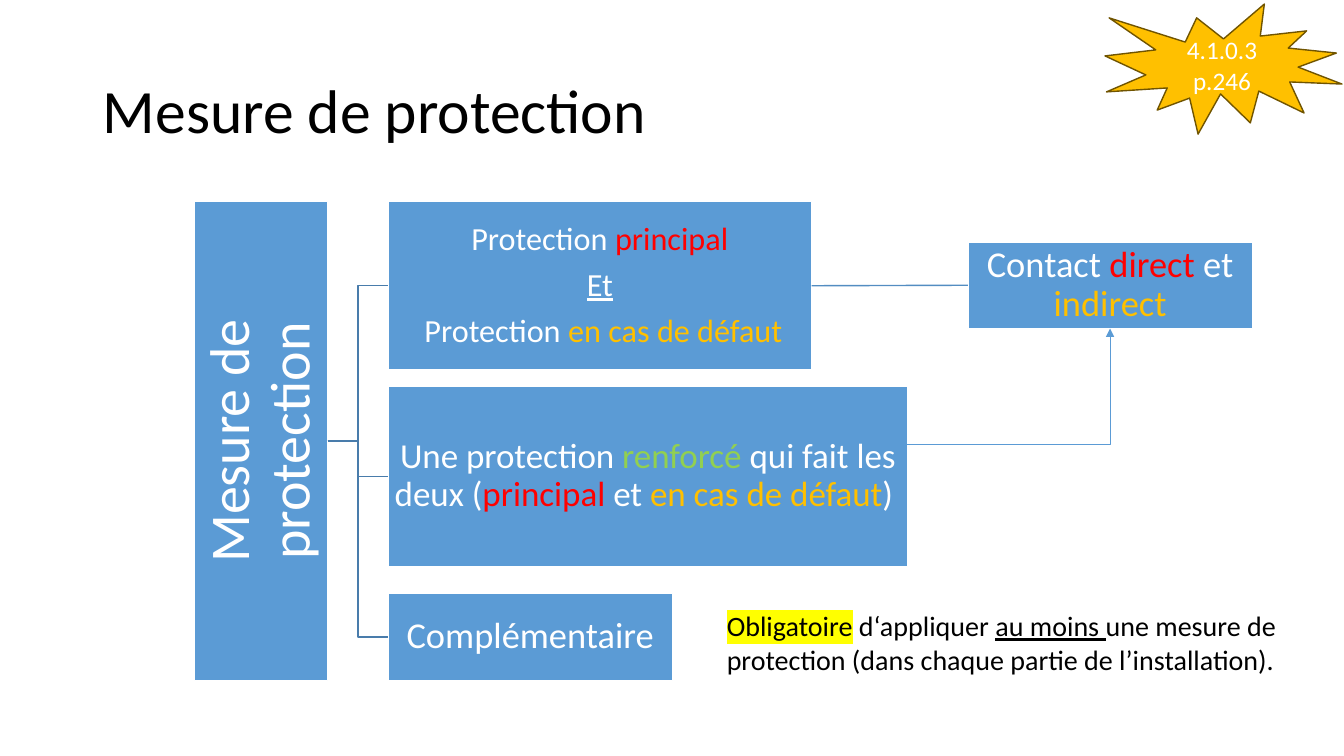
from dataclasses import dataclass

from lxml import etree
from pptx import Presentation
from pptx.dml.color import RGBColor
from pptx.enum import shapes, text
from pptx.oxml.ns import qn
from pptx.util import Inches, Pt


@dataclass(frozen=True)
class Theme:
    font: str = "Calibri"
    black: str = "000000"
    white: str = "FFFFFF"
    blue: str = "5B9BD5"
    branch: str = "497CAB"
    link: str = "538DC1"
    red: str = "FF0000"
    gold: str = "FFC000"
    gold_edge: str = "705400"
    green: str = "92D050"
    yellow: str = "FFFF00"
    title: int = 44
    root: int = 40
    box: int = 26
    strong: int = 25
    main: int = 23
    note: int = 20
    badge: int = 18


T = Theme()


def rgb(value):
    return RGBColor.from_string(value)


def write(tf, paragraphs, size, color, align=text.PP_ALIGN.CENTER,
          anchor=text.MSO_ANCHOR.MIDDLE, inset=None, **spacing):
    """Fill a frame; each run is (words, dict of color, underline, highlight)."""
    tf.word_wrap = True
    tf.vertical_anchor = anchor
    if inset is not None:
        for side in ("left", "top", "right", "bottom"):
            setattr(tf, f"margin_{side}", Inches(inset))
    for i, runs in enumerate(paragraphs):
        p = tf.add_paragraph() if i else tf.paragraphs[0]
        for name, value in {"alignment": align, **spacing}.items():
            setattr(p, name, value)
        for words, look in runs:
            r = p.add_run()
            r.text = words
            font = {"name": T.font, "size": Pt(size),
                    "underline": look.get("underline")}
            for name, value in font.items():
                setattr(r.font, name, value)
            r.font.color.rgb = rgb(look.get("color", color))
            if "highlight" in look:
                mark = etree.Element(qn("a:highlight"))
                etree.SubElement(mark, qn("a:srgbClr"), val=look["highlight"])
                r.font._element.find(qn("a:solidFill")).addnext(mark)


def add_figure(s, kind, box, fill, line):
    sp = s.shapes.add_shape(kind, *map(Inches, box))
    sp.shadow.inherit = False
    sp.fill.solid()
    sp.fill.fore_color.rgb = rgb(fill)
    sp.line.color.rgb = rgb(line)
    sp.line.width = Pt(1)
    return sp


def add_box(s, box, paragraphs, size, inset=0.02):
    sp = add_figure(s, shapes.MSO_SHAPE.RECTANGLE, box, T.blue, T.white)
    write(sp.text_frame, paragraphs, size, T.white, inset=inset,
          line_spacing=0.9, space_after=Pt(round(size * 0.35)))
    return sp


def add_link(s, kind, color, width, start=(0, 0), end=(0, 0)):
    link = s.shapes.add_connector(kind, *map(Inches, start + end))
    link.line.color.rgb = rgb(color)
    link.line.width = Pt(width)
    etree.SubElement(link._element.spPr, qn("a:effectLst"))
    return link


def add_title(s, box):
    sp = s.shapes.title
    sp.left, sp.top, sp.width, sp.height = map(Inches, box)
    write(sp.text_frame, [[("Mesure de protection", {})]], T.title, T.black,
          align=text.PP_ALIGN.LEFT, line_spacing=0.9)


def add_diagram(s, box):
    x, y, w, h = box
    red, gold = {"color": T.red}, {"color": T.gold}
    elbow = shapes.MSO_CONNECTOR.ELBOW
    column = x + 1.92

    # Root bar, read from bottom to top
    root = add_box(s, (x, y, 1.32, h), [[("Mesure de protection", {})]],
                   T.root, inset=0.03)
    root.text_frame._txBody.bodyPr.set("vert", "vert270")

    # Three measures and the kind of contact they cover
    main = add_box(s, (column, y, 4.2, 1.67), [
        [("Protection", {}), (" principal", red)],
        [("Et", {"underline": True})],
        [(" Protection ", {}), ("en cas de défaut", gold)],
    ], T.main)
    strong = add_box(s, (column, y + 1.83, 5.15, 1.79), [
        [("Une protection ", {}), ("renforcé", {"color": T.green}),
         (" qui fait les deux (", {}), ("principal", red), (" et ", {}),
         ("en cas de défaut", gold), (") ", {})],
    ], T.strong)
    extra = add_box(s, (column, y + h - 0.86, 2.82, 0.86),
                    [[("Complémentaire", {})]], T.box)
    contact = add_box(s, (x + w - 2.82, y + 0.4, 2.82, 0.86), [
        [("Contact ", {}), ("direct", red), (" et ", {}), ("indirect", gold)],
    ], T.box)

    # Branches from the root
    for measure in (main, strong, extra):
        branch = add_link(s, elbow, T.branch, 1)
        branch.begin_connect(root, 3)
        branch.end_connect(measure, 1)

    # Links to the contact box
    link = add_link(s, shapes.MSO_CONNECTOR.STRAIGHT, T.link, 1)
    link.begin_connect(main, 3)
    link.end_connect(contact, 1)
    arrow = add_link(s, elbow, T.blue, 0.5, (column + 5.15, y + 2.41),
                     (x + w - 1.41, y + 1.26))
    arrow._element.spPr.find(qn("a:prstGeom")).set("prst", "bentConnector2")
    etree.SubElement(arrow.line._get_or_add_ln(), qn("a:tailEnd"),
                     type="triangle")


def add_note(s, box):
    sp = s.shapes.add_textbox(*map(Inches, box))
    write(sp.text_frame, [[
        ("Obligatoire", {"highlight": T.yellow}),
        (" d‘appliquer ", {}),
        ("au moins ", {"underline": True}),
        ("une mesure de protection (dans chaque partie de l’installation).",
         {}),
    ]], T.note, T.black, align=text.PP_ALIGN.LEFT, anchor=text.MSO_ANCHOR.TOP)


def add_badge(s, box):
    sp = add_figure(s, shapes.MSO_SHAPE.EXPLOSION1, box, T.gold, T.gold_edge)
    write(sp.text_frame, [[("4.1.0.3 p.246", {})]], T.badge, T.white)


def main():
    prs = Presentation()
    prs.slide_width, prs.slide_height = Inches(13.33), Inches(7.5)
    s = prs.slides.add_slide(prs.slide_layouts[5])
    add_title(s, (0.92, 0.4, 11.5, 1.45))
    add_diagram(s, (1.93, 2, 10.49, 4.75))
    add_note(s, (7.11, 5.99, 5.72, 0.77))
    add_badge(s, (10.96, 0.04, 2.35, 1.29))
    prs.save("out.pptx")


if __name__ == "__main__":
    main()
